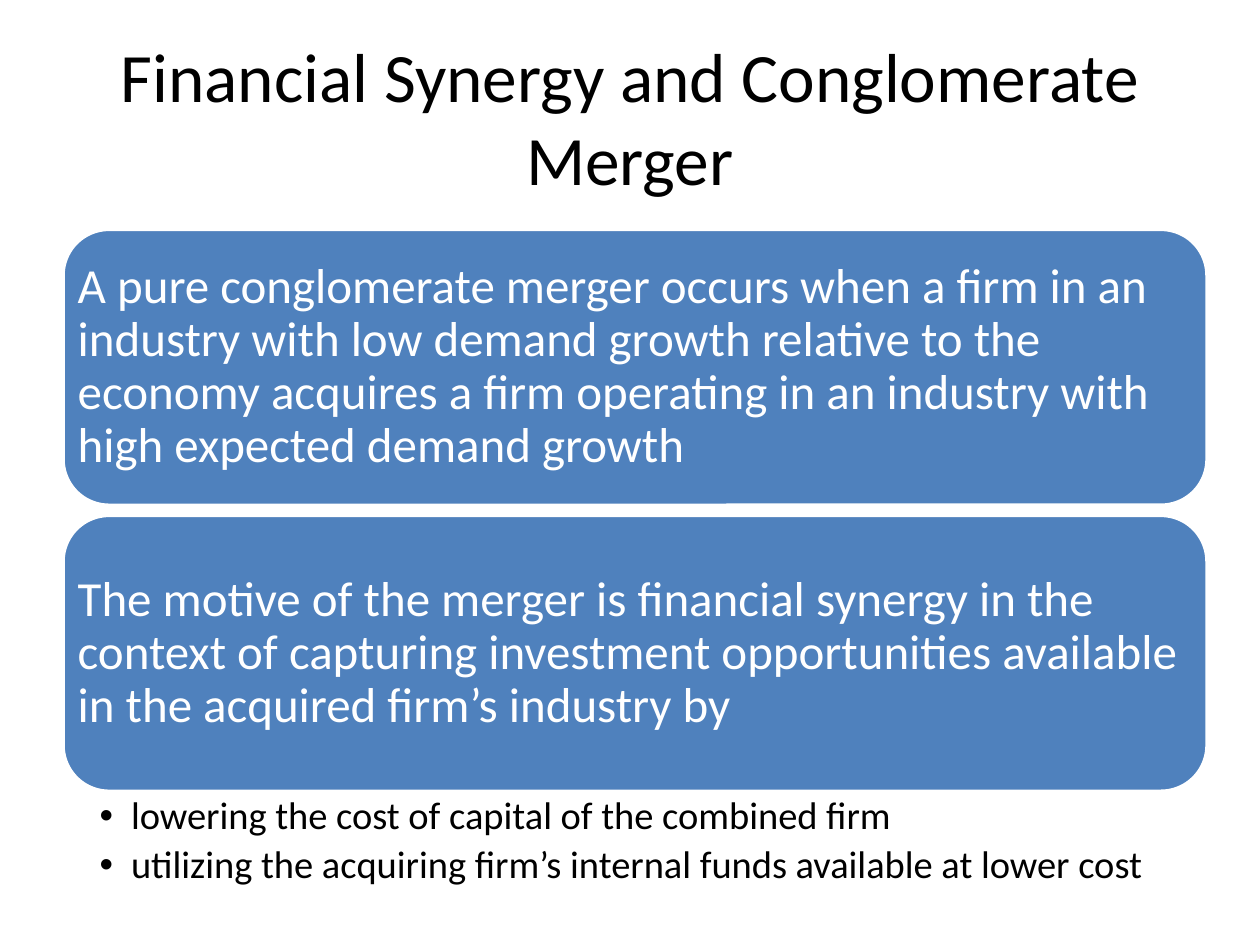
from pptx import Presentation, util as u
from pptx.dml.color import RGBColor
from pptx.enum import shapes, text
from pptx.oxml.ns import qn
from lxml import etree

BLACK = RGBColor(0, 0, 0)
WHITE = RGBColor(255, 255, 255)
BLUE = RGBColor(0x4F, 0x81, 0xBD)
LEFT, WIDE = 0.5, 9.08
TOP, HIGH, STEP = 1.82, 2.19, 2.27
PANELS = (
    "A pure conglomerate merger occurs when a firm in an industry with low demand growth "
    "relative to the economy acquires a firm operating in an industry with high expected demand growth",
    "The motive of the merger is financial synergy in the context of capturing investment "
    "opportunities available in the acquired firm’s industry by",
)
POINTS = (
    "lowering the cost of capital of the combined firm",
    "utilizing the acquiring firm’s internal funds available at lower cost",
)


def put(item, form):
    """Set each attribute of item from a dict of format values."""
    for key, value in form.items():
        setattr(item, key, value)


def frame(shape, pads, anchor):
    """Set up the text frame of a shape and return it."""
    body = shape.text_frame
    put(body, {"word_wrap": True, "vertical_anchor": anchor})
    sides = ("left", "top", "right", "bottom")
    put(body, {f"margin_{side}": u.Inches(pad) for side, pad in zip(sides, pads)})
    return body


def write(para, words, size, color, form):
    """Write one formatted run into a paragraph."""
    put(para, form)
    run = para.add_run()
    run.text = words
    put(run.font, {"name": "Calibri", "size": u.Pt(size)})
    run.font.color.rgb = color


def bullet(para):
    """Give a paragraph a hanging round bullet."""
    props = para._p.get_or_add_pPr()
    props.set("marL", str(u.Inches(0.25)))
    props.set("indent", str(-u.Inches(0.25)))
    etree.SubElement(props, qn("a:buFont"), typeface="Arial")
    etree.SubElement(props, qn("a:buChar"), char="•")


def title(slide, words):
    """Add the centred heading."""
    box = slide.shapes.add_textbox(*map(u.Inches, (0.5, 0.3, 9, 1.25)))
    body = frame(box, (0.1, 0.05, 0.1, 0.05), text.MSO_ANCHOR.MIDDLE)
    write(body.paragraphs[0], words, 39.6, BLACK, {"alignment": text.PP_ALIGN.CENTER})


def panel(slide, top, words):
    """Add a rounded blue panel with its statement."""
    shape = slide.shapes.add_shape(
        shapes.MSO_SHAPE.ROUNDED_RECTANGLE, *map(u.Inches, (LEFT, top, WIDE, HIGH)))
    shape.adjustments[0] = 0.167
    shape.shadow.inherit = False
    shape.fill.solid()
    shape.fill.fore_color.rgb = BLUE
    shape.line.color.rgb = WHITE
    shape.line.width = u.Pt(2)
    body = frame(shape, (0.01,) * 4, text.MSO_ANCHOR.MIDDLE)
    form = {"alignment": text.PP_ALIGN.LEFT, "line_spacing": 0.9}
    write(body.paragraphs[0], words, 28, WHITE, form)


def points(slide, top, lines):
    """Add the bulleted list below the panels."""
    box = slide.shapes.add_textbox(*map(u.Inches, (LEFT, top, WIDE, 0.82)))
    body = frame(box, (0.29, 0.04, 0.22, 0.04), text.MSO_ANCHOR.TOP)
    for row, words in enumerate(lines):
        para = body.add_paragraph() if row else body.paragraphs[0]
        form = {"line_spacing": 0.9, "space_before": u.Pt(4.4 if row else 0)}
        write(para, words, 22, BLACK, form)
        bullet(para)


def main():
    """Build the slide and save it."""
    deck = Presentation()
    put(deck, {"slide_width": u.Inches(10), "slide_height": u.Inches(7.5)})
    slide = deck.slides.add_slide(deck.slide_layouts[6])
    title(slide, "Financial Synergy and Conglomerate Merger")
    for row, words in enumerate(PANELS):
        panel(slide, TOP + row * STEP, words)
    points(slide, TOP + STEP + HIGH, POINTS)
    deck.save("out.pptx")


if __name__ == "__main__":
    main()
